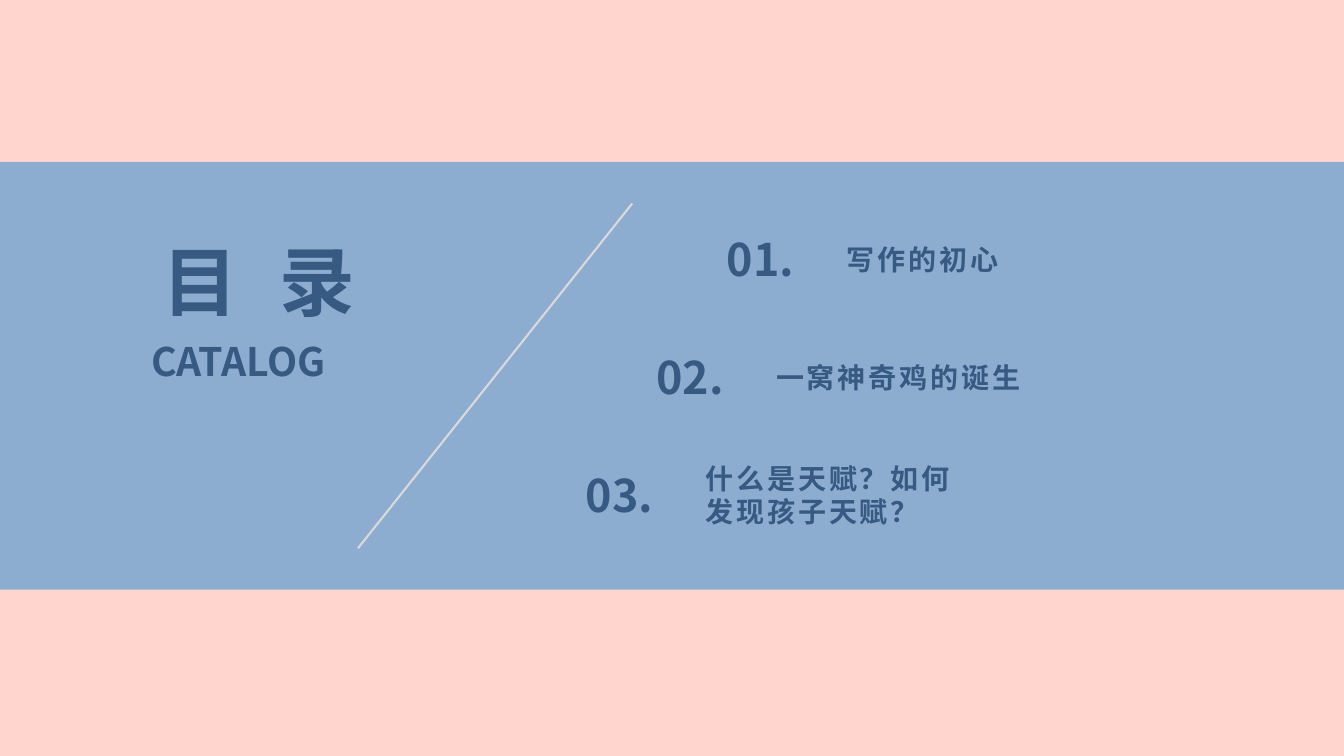
from dataclasses import dataclass

from pptx import Presentation
from pptx.dml.color import RGBColor
from pptx.enum.shapes import MSO_CONNECTOR, MSO_SHAPE
from pptx.enum.text import MSO_ANCHOR as ANCHOR, PP_ALIGN as ALIGN
from pptx.oxml.ns import qn
from pptx.util import Inches, Pt


@dataclass(frozen=True)
class Theme:
    background: RGBColor = RGBColor.from_string("FFD5CD")
    band: RGBColor = RGBColor.from_string("8DADD0")
    ink: RGBColor = RGBColor.from_string("365A82")
    rule: RGBColor = RGBColor.from_string("D9D9D9")
    heading_font: str = "Noto Sans CJK SC"
    item_font: str = "Arial"
    title: int = 54
    number: int = 32
    subtitle: int = 28
    item: int = 20


THEME = Theme()
ITEMS = ["写作的初心", "一窝神奇鸡的诞生", "什么是天赋？如何发现孩子天赋？"]


def add_band(s, top, width, height):
    band = s.shapes.add_shape(MSO_SHAPE.RECTANGLE, 0, Inches(top), Inches(width), Inches(height))
    band.shadow.inherit = False
    band.fill.solid()
    band.fill.fore_color.rgb = THEME.band
    band.line.fill.background()


def add_rule(s, x1, y1, x2, y2):
    rule = s.shapes.add_connector(
        MSO_CONNECTOR.STRAIGHT, Inches(x1), Inches(y1), Inches(x2), Inches(y2))
    rule.line.color.rgb = THEME.rule
    rule.line.width = Pt(1.5)
    sp_pr = rule._element.spPr
    sp_pr.append(sp_pr.makeelement(qn("a:effectLst"), {}))


def add_text(s, text, left, top, width, height, size, font=THEME.heading_font,
             align=ALIGN.LEFT, anchor=ANCHOR.TOP, spacing=0):
    box = s.shapes.add_textbox(Inches(left), Inches(top), Inches(width), Inches(height))
    tf = box.text_frame
    tf.word_wrap = True
    tf.vertical_anchor = anchor
    p = tf.paragraphs[0]
    p.alignment = align
    r = p.add_run()
    r.text = text
    p.font.name = font
    p.font.size = Pt(size)
    p.font.bold = True
    p.font.color.rgb = THEME.ink
    if spacing:  # letter spacing, in hundredths of a point
        r._r.get_or_add_rPr().set("spc", str(spacing * 100))


def add_item(s, index, text):
    # Each entry steps down and to the left, along the slanted rule
    left, top = 7.11 - 0.7 * index, 2.25 + 1.17 * index
    add_text(s, f"{index + 1:02}.", left, top, 0.99, 0.64, THEME.number)
    add_text(s, text, left + 1.19, top + 0.1, 2.66, 0.44, THEME.item,
             font=THEME.item_font, anchor=ANCHOR.MIDDLE, spacing=2)


def main():
    prs = Presentation()
    prs.slide_width, prs.slide_height = Inches(13.33), Inches(7.5)
    s = prs.slides.add_slide(prs.slide_layouts[6])
    s.background.fill.solid()
    s.background.fill.fore_color.rgb = THEME.background

    # Band and slanted rule
    add_band(s, 1.61, 13.33, 4.24)
    add_rule(s, 3.55, 5.44, 6.27, 2.02)

    # Heading
    add_text(s, "目录", 0.85, 2.27, 3.44, 1.01, THEME.title,
             align=ALIGN.CENTER, anchor=ANCHOR.BOTTOM, spacing=30)
    add_text(s, "CATALOG", 1.22, 3.3, 2.29, 0.57, THEME.subtitle, align=ALIGN.CENTER)

    # Contents
    for index, text in enumerate(ITEMS):
        add_item(s, index, text)

    prs.save("out.pptx")


if __name__ == "__main__":
    main()
